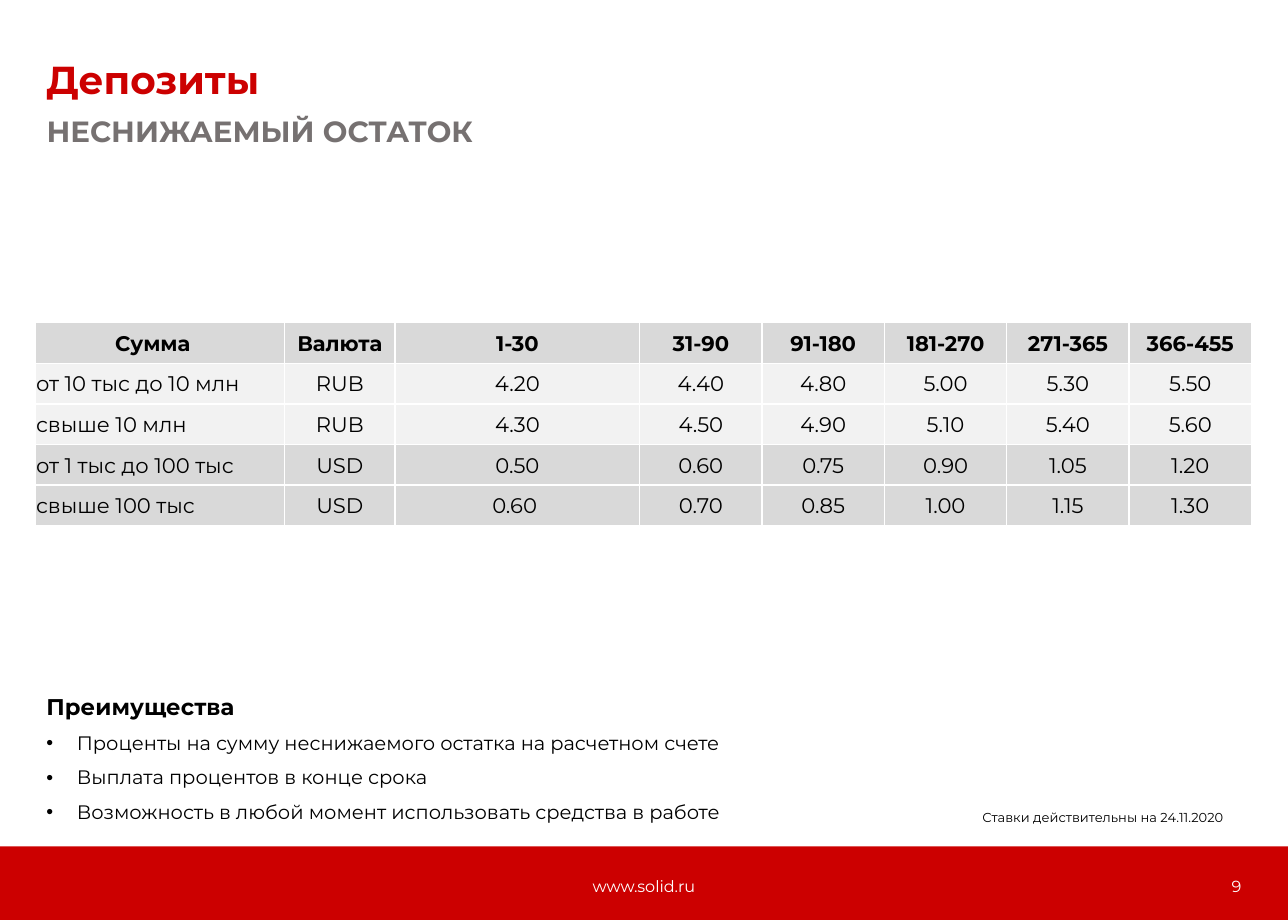
from lxml.etree import SubElement
from pptx import Presentation
from pptx.dml.color import RGBColor
from pptx.enum.shapes import MSO_SHAPE as Shape
from pptx.enum.text import MSO_ANCHOR as Anchor, PP_ALIGN as Align
from pptx.oxml import parse_xml
from pptx.oxml.ns import nsdecls, qn
from pptx.util import Inches, Pt

# Content
TITLE = "Депозиты"
SUBTITLE = "НЕСНИЖАЕМЫЙ ОСТАТОК"
HEADER = ["Сумма", "Валюта", "1-30", "31-90", "91-180", "181-270", "271-365", "366-455"]
RATES = [
    ["от 10 тыс до 10 млн", "RUB", "4.20", "4.40", "4.80", "5.00", "5.30", "5.50"],
    ["свыше 10 млн", "RUB", "4.30", "4.50", "4.90", "5.10", "5.40", "5.60"],
    ["от 1 тыс до 100 тыс", "USD", "0.50", "0.60", "0.75", "0.90", "1.05", "1.20"],
    ["свыше 100 тыс", "USD", "0.60 ", "0.70", "0.85", "1.00", "1.15", "1.30"],
]
BENEFITS_HEADING = "Преимущества"
BENEFITS = [
    "Проценты на сумму неснижаемого остатка на расчетном счете",
    "Выплата процентов в конце срока",
    "Возможность в любой момент использовать средства в работе",
]
NOTE = "Ставки действительны на 24.11.2020"
SITE, PAGE_NUMBER = "www.solid.ru", "9"

# Formats
RED, GREY, BLACK, WHITE = "CC0000", "767171", "000000", "FFFFFF"
DARK, LIGHT = "D9D9D9", "F2F2F2"
ROW_FILLS = {"RUB": LIGHT, "USD": DARK}
TIGHT = {"line_spacing": 0.9}
FOOTER = {"size": 9.9, "color": WHITE}

# Places: left, top, width, height in percent of the slide
BAND = (0, 92, 100, 8)
TITLE_AT = (2.72, 5.97, 94.46, 8.64)
SUBTITLE_AT = (2.72, 12.07, 92.29, 8.64)
TABLE_AT = (2.72, 35.07, 94.46, 22.11)
BENEFITS_AT = (2.72, 74.97, 94.46, 16.39)
NOTE_AT = (74.77, 87.55, 21.14, 3.68)
SITE_AT = (33.12, 93.65, 33.76, 5.34)
NUMBER_AT = (74.77, 93.65, 22.5, 5.34)
LEAD_COLUMNS = [20.5, 9.1, 20.1]  # percent of the table, the rest is shared equally

deck = Presentation()
deck.slide_width, deck.slide_height = Inches(11.02), Inches(7.87)
page = deck.slides.add_slide(deck.slide_layouts[6])


def place(at):
    sides = (deck.slide_width, deck.slide_height) * 2
    return [int(side * share / 100) for side, share in zip(sides, at)]


def color(value):
    return RGBColor.from_string(value)


def apply(target, formats):
    for name, value in formats.items():
        setattr(target, name, value)


def write(para, text, size, color_hex=BLACK, bold=False, **formats):
    apply(para, formats)
    span = para.add_run()
    span.text = text
    apply(span.font, {"name": "Montserrat", "size": Pt(size), "bold": bold})
    span.font.color.rgb = color(color_hex)


def add_box(at, anchor=Anchor.TOP):
    frame = page.shapes.add_textbox(*place(at)).text_frame
    apply(frame, {"word_wrap": True, "vertical_anchor": anchor})
    return frame


def add_bullet(para):
    props = para._p.get_or_add_pPr()
    props.set("marL", str(Inches(0.26)))
    props.set("indent", str(-Inches(0.26)))
    SubElement(props, qn("a:buFont"), typeface="Arial")
    SubElement(props, qn("a:buChar"), char="•")


def add_borders(cell):
    props = cell._tc.get_or_add_tcPr()
    for index, side in enumerate(("lnL", "lnR", "lnT", "lnB")):
        props.insert(index, parse_xml(
            f'<a:{side} {nsdecls("a")} w="{Pt(1)}"><a:solidFill>'
            f'<a:srgbClr val="{WHITE}"/></a:solidFill></a:{side}>'))


# Footer band
band = page.shapes.add_shape(Shape.RECTANGLE, *place(BAND))
band.shadow.inherit = False
band.fill.solid()
band.fill.fore_color.rgb = color(RED)
band.line.fill.background()

# Headings and footer texts
for at, anchor, text, size, color_hex, bold, align in [
    (TITLE_AT, Anchor.TOP, TITLE, 24, RED, True, Align.LEFT),
    (SUBTITLE_AT, Anchor.TOP, SUBTITLE, 18, GREY, True, Align.LEFT),
    (NOTE_AT, Anchor.TOP, NOTE, 8, BLACK, False, Align.RIGHT),
    (SITE_AT, Anchor.MIDDLE, SITE, 9.9, WHITE, False, Align.CENTER),
    (NUMBER_AT, Anchor.MIDDLE, PAGE_NUMBER, 9.9, WHITE, False, Align.RIGHT),
]:
    write(add_box(at, anchor).paragraphs[0], text, size, color_hex, bold,
          alignment=align, line_spacing=0.9 if anchor == Anchor.TOP else 1.0)

# Rates table
rows = [HEADER] + RATES
table = page.shapes.add_table(len(rows), len(HEADER), *place(TABLE_AT)).table
apply(table, {"first_row": False, "horz_banding": False})
_, _, table_width, table_height = place(TABLE_AT)
equal_count = len(HEADER) - len(LEAD_COLUMNS)
shares = LEAD_COLUMNS + [(100 - sum(LEAD_COLUMNS)) / equal_count] * equal_count
for column, share in zip(table.columns, shares):
    column.width = int(table_width * share / 100)
for r, values in enumerate(rows):
    table.rows[r].height = table_height // len(rows)
    for c, value in enumerate(values):
        cell = table.cell(r, c)
        apply(cell, {"vertical_anchor": Anchor.MIDDLE, "margin_left": Inches(0.01),
                     "margin_top": Inches(0.01), "margin_bottom": 0,
                     "margin_right": Inches(0.01 if c else 0.13)})
        cell.fill.solid()
        cell.fill.fore_color.rgb = color(ROW_FILLS.get(values[1], DARK))
        add_borders(cell)
        write(cell.text_frame.paragraphs[0], value, 13, bold=r == 0,
              alignment=Align.LEFT if r and not c else Align.CENTER)

# Benefits
benefits = add_box(BENEFITS_AT)
write(benefits.paragraphs[0], BENEFITS_HEADING, 14, bold=True,
      alignment=Align.JUSTIFY, **TIGHT)
for text in BENEFITS:
    para = benefits.add_paragraph()
    add_bullet(para)
    write(para, text, 12, space_before=Pt(8.3), **TIGHT)

deck.save("out.pptx")
